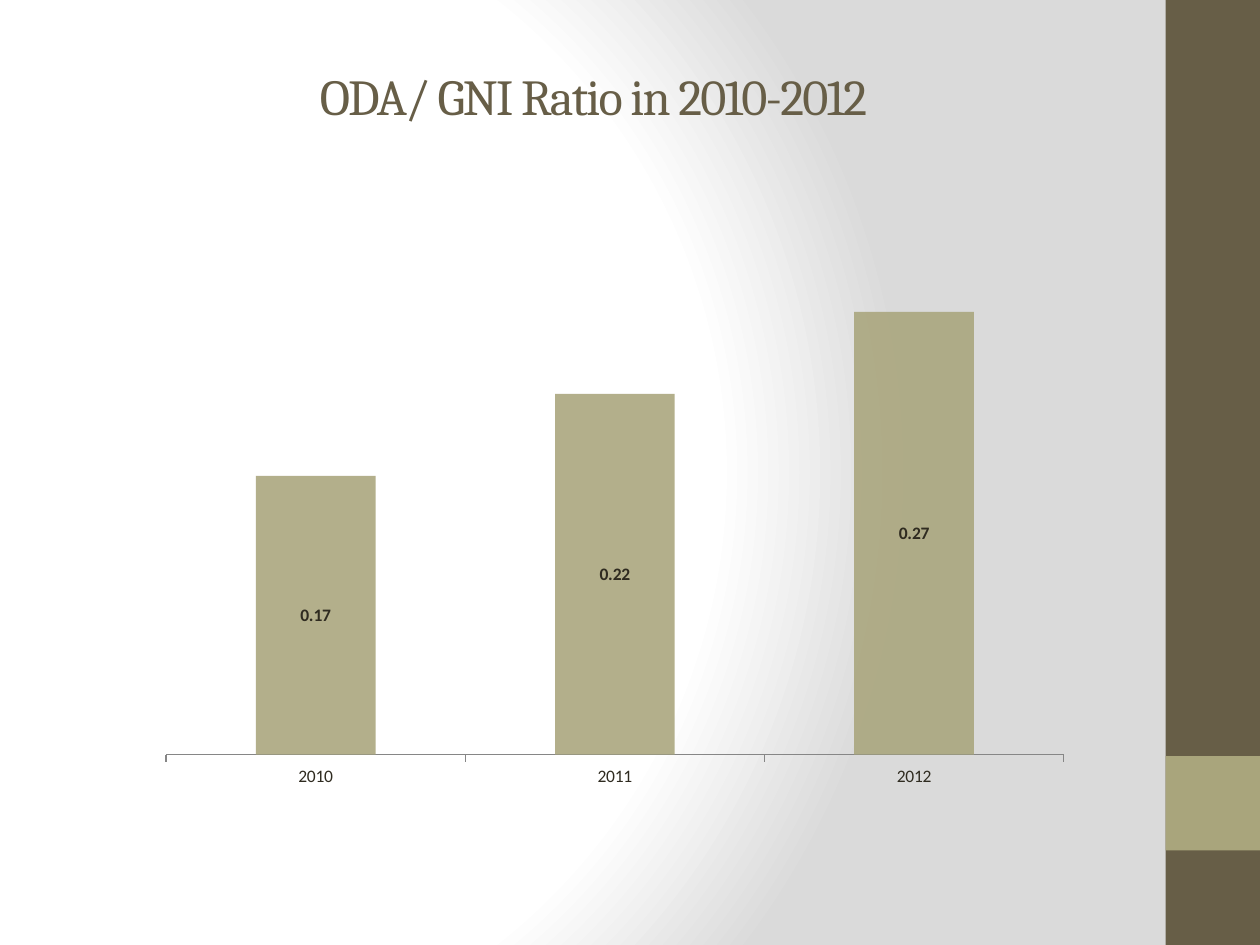
from dataclasses import dataclass

from lxml.etree import SubElement
from pptx import Presentation
from pptx.chart.data import CategoryChartData as ChartData
from pptx.dml.color import RGBColor as Rgb
from pptx.enum.chart import XL_CHART_TYPE as Kind, XL_LABEL_POSITION as Spot
from pptx.enum.chart import XL_TICK_MARK as Tick
from pptx.enum.shapes import MSO_SHAPE as Shape
from pptx.enum.text import MSO_ANCHOR as Anchor, PP_ALIGN as Align
from pptx.oxml.ns import qn
from pptx.slide import Slide
from pptx.util import Inches, Pt

WIDE, HIGH = Inches(10), Inches(7.5)


@dataclass(frozen=True)
class Theme:
    dark: str = "675E47"
    sage: str = "A9A57C"
    ink: str = "2F2B20"
    axis: str = "868686"
    white: str = "FFFFFF"
    grey: str = "DADADA"
    head: str = "Cambria"
    body: str = "Calibri"
    title: float = 28.8
    label: float = 10


@dataclass(frozen=True)
class Box:
    """Left, top, width and height in inches."""
    x: float
    y: float
    w: float
    h: float

    def place(self) -> tuple:
        return tuple(Inches(n) for n in (self.x, self.y, self.w, self.h))


@dataclass(frozen=True)
class Band:
    box: Box
    color: str


THEME = Theme()
UNIT = 0.75  # side of the square in the right-hand strip
EDGE = 10 - UNIT
BANDS = (
    Band(Box(EDGE, 0, UNIT, 10 * UNIT), THEME.dark),
    Band(Box(EDGE, 8 * UNIT, UNIT, UNIT), THEME.sage),
)
RATIOS = {"2010": 0.17, "2011": 0.22, "2012": 0.27}


def paint_back(slide: Slide) -> None:
    slide.background.fill.gradient()
    grad = slide.element.find(".//" + qn("a:gradFill"))
    for child in list(grad):
        grad.remove(child)
    stops = SubElement(grad, qn("a:gsLst"))
    for share, color in ((0, THEME.white), (75, THEME.white), (100, THEME.grey)):
        stop = SubElement(stops, qn("a:gs"), pos=str(share * 1000))
        SubElement(stop, qn("a:srgbClr"), val=color)
    ring = SubElement(grad, qn("a:path"), {"path": "circle"})
    SubElement(ring, qn("a:fillToRect"), l="20000", t="50000", r="100000", b="50000")


def draw_band(slide: Slide, band: Band) -> None:
    shape = slide.shapes.add_shape(Shape.RECTANGLE, *band.box.place())
    shape.shadow.inherit = False
    shape.fill.solid()
    shape.fill.fore_color.rgb = Rgb.from_string(band.color)
    shape.line.fill.background()


def draw_title(slide: Slide, box: Box, text: str) -> None:
    frame = slide.shapes.add_textbox(*box.place()).text_frame
    frame.word_wrap = True
    frame.vertical_anchor = Anchor.MIDDLE
    para = frame.paragraphs[0]
    para.alignment = Align.CENTER
    run = para.add_run()
    run.text = text
    run.font.name = THEME.head
    run.font.size = Pt(THEME.title)
    run.font.color.rgb = Rgb.from_string(THEME.dark)
    run.font._element.set("spc", "-100")


def draw_chart(slide: Slide, box: Box, ratios: dict[str, float]) -> None:
    data = ChartData(number_format="0.00")
    data.categories = list(ratios)
    data.add_series("Series 1", list(ratios.values()))
    chart = slide.shapes.add_chart(Kind.COLUMN_STACKED, *box.place(), data).chart
    chart.has_legend = chart.has_title = False
    chart.font.name = THEME.body
    chart.font.size = Pt(THEME.label)
    chart.font.color.rgb = Rgb.from_string(THEME.ink)

    # Axes
    years, scale = chart.category_axis, chart.value_axis
    years.major_tick_mark = Tick.OUTSIDE
    years.format.line.color.rgb = Rgb.from_string(THEME.axis)
    scale.minimum_scale, scale.maximum_scale = 0, 0.3
    scale.has_major_gridlines = False
    scale.visible = False

    # Columns, slightly see-through
    plot = chart.plots[0]
    plot.gap_width, plot.overlap = 150, 100
    plot.vary_by_categories = False
    fill = plot.series[0].format.fill
    fill.solid()
    fill.fore_color.rgb = Rgb.from_string(THEME.sage)
    tint = plot.series[0]._element.find(".//" + qn("a:srgbClr"))
    SubElement(tint, qn("a:alpha"), val="88000")

    # Value labels
    labels = plot.series[0].data_labels
    labels.show_value = True
    labels.position = Spot.CENTER
    labels.font.bold = True
    labels.font.name = THEME.body
    labels.font.size = Pt(THEME.label)
    labels.font.color.rgb = Rgb.from_string(THEME.ink)


def main() -> None:
    deck = Presentation()
    deck.slide_width, deck.slide_height = WIDE, HIGH
    slide = deck.slides.add_slide(deck.slide_layouts[6])
    paint_back(slide)
    for band in BANDS:
        draw_band(slide, band)
    draw_title(slide, Box(0.25, 0.42, 8.92, 0.67), "ODA/ GNI Ratio in 2010-2012")
    draw_chart(slide, Box(1.17, 2, 7.42, 4.33), RATIOS)
    deck.save("out.pptx")


if __name__ == "__main__":
    main()
